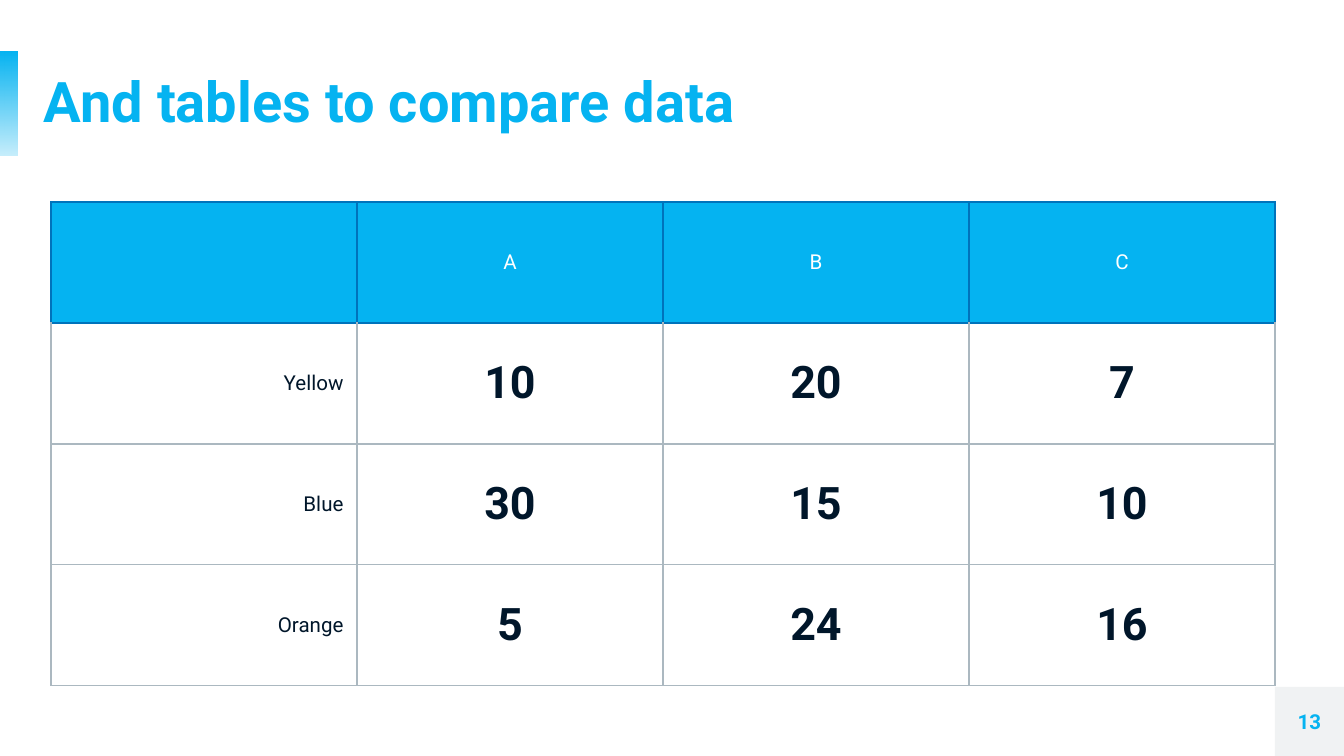
from lxml.etree import SubElement
from pptx import Presentation
from pptx.dml.color import RGBColor
from pptx.enum.shapes import MSO_SHAPE
from pptx.enum.text import MSO_ANCHOR, PP_ALIGN
from pptx.oxml import parse_xml
from pptx.oxml.ns import nsdecls, qn
from pptx.util import Emu, Pt

EMU_PER_PX = 914400 / 134.4
FONT = "Roboto"
COLORS = {
    "sky": "05B3F1",
    "header_border": "0073BB",
    "body_border": "ABB8C0",
    "ink": "00162A",
    "white": "FFFFFF",
    "corner": "F0F2F3",
}
HEADER = ["", "A", "B", "C"]
BODY = [
    ["Yellow", "10", "20", "7"],
    ["Blue", "30", "15", "10"],
    ["Orange", "5", "24", "16"],
]
TABLE_LEFT, TABLE_TOP, COLUMN_WIDTH, ROW_HEIGHT = 51, 202, 306, 121
CORNER_BOX = (1275, 687, 69, 69)


def px(length):
    """Turn pixels into EMU."""
    return Emu(round(length * EMU_PER_PX))


def rgb(name):
    """Look up a named colour."""
    return RGBColor.from_string(COLORS[name])


def write(frame, text, size, color, bold=False, align=PP_ALIGN.LEFT):
    """Put one formatted run into the first paragraph of a text frame."""
    paragraph = frame.paragraphs[0]
    paragraph.alignment = align
    run = paragraph.add_run()
    run.text = text
    run.font.name = FONT
    run.font.size = Pt(size)
    run.font.bold = bold
    run.font.color.rgb = rgb(color)
    return paragraph


def add_label(slide, box, text, size, align=PP_ALIGN.LEFT):
    """Add a bold sky-blue text box without insets."""
    frame = slide.shapes.add_textbox(*map(px, box)).text_frame
    frame.word_wrap = True
    frame.vertical_anchor = MSO_ANCHOR.MIDDLE
    frame.margin_left = frame.margin_right = 0
    frame.margin_top = frame.margin_bottom = 0
    return write(frame, text, size, "sky", True, align)


def add_block(slide, box):
    """Add a rectangle without outline or shadow."""
    block = slide.shapes.add_shape(MSO_SHAPE.RECTANGLE, *map(px, box))
    block.shadow.inherit = False
    block.line.fill.background()
    return block


def add_accent(slide, box):
    """Add the title accent that fades out downwards."""
    accent = add_block(slide, box)
    accent.fill.gradient()
    accent.fill.gradient_angle = 90
    for stop in accent.fill.gradient_stops:
        stop.color.rgb = rgb("sky")
    faded = next(accent._element.spPr.iter(qn("a:srgbClr")))
    SubElement(faded, qn("a:alpha"), val="22000")


def set_borders(cell, color, top):
    """Draw the four cell borders, the top one in its own colour."""
    properties = cell._tc.get_or_add_tcPr()
    sides = {"L": color, "R": color, "T": top, "B": color}
    for index, (side, name) in enumerate(sides.items()):
        properties.insert(index, parse_xml(
            f'<a:ln{side} {nsdecls("a")} w="{Pt(0.75)}"><a:solidFill>'
            f'<a:srgbClr val="{COLORS[name]}"/></a:solidFill></a:ln{side}>'))


def fill_cell(cell, text, row, column):
    """Style one cell by its place in the table and write its text."""
    cell.vertical_anchor = MSO_ANCHOR.MIDDLE
    cell.margin_left = cell.margin_right = Pt(7.2)
    cell.margin_top = cell.margin_bottom = Pt(5)
    if row == 0:
        cell.fill.solid()
        cell.fill.fore_color.rgb = rgb("sky")
    else:
        cell.fill.background()
    border = "body_border" if row else "header_border"
    set_borders(cell, border, border if row > 1 else "header_border")
    if text:
        is_value = row > 0 and column > 0
        write(cell.text_frame, text, 24 if is_value else 11,
              "ink" if row else "white", is_value,
              PP_ALIGN.CENTER if column else PP_ALIGN.RIGHT)


def add_comparison(slide):
    """Add the comparison table."""
    rows = [HEADER, *BODY]
    table = slide.shapes.add_table(
        len(rows), len(HEADER), px(TABLE_LEFT), px(TABLE_TOP),
        px(COLUMN_WIDTH * len(HEADER)), px(ROW_HEIGHT * len(rows))).table
    table.first_row = table.horz_banding = False
    for column in table.columns:
        column.width = px(COLUMN_WIDTH)
    for row, texts in enumerate(rows):
        table.rows[row].height = px(ROW_HEIGHT)
        for column, text in enumerate(texts):
            fill_cell(table.cell(row, column), text, row, column)


def main():
    """Build and save the slide."""
    deck = Presentation()
    deck.slide_width, deck.slide_height = px(1344), px(756)
    slide = deck.slides.add_slide(deck.slide_layouts[6])
    add_accent(slide, (-1, 52, 19, 104))
    corner = add_block(slide, CORNER_BOX)
    corner.fill.solid()
    corner.fill.fore_color.rgb = rgb("corner")
    title = add_label(slide, (44, 52, 1246, 104), "And tables to compare data", 30)
    title.line_spacing = 0.9
    add_comparison(slide)
    add_label(slide, CORNER_BOX, "13", 11, PP_ALIGN.CENTER)
    deck.save("out.pptx")


if __name__ == "__main__":
    main()
